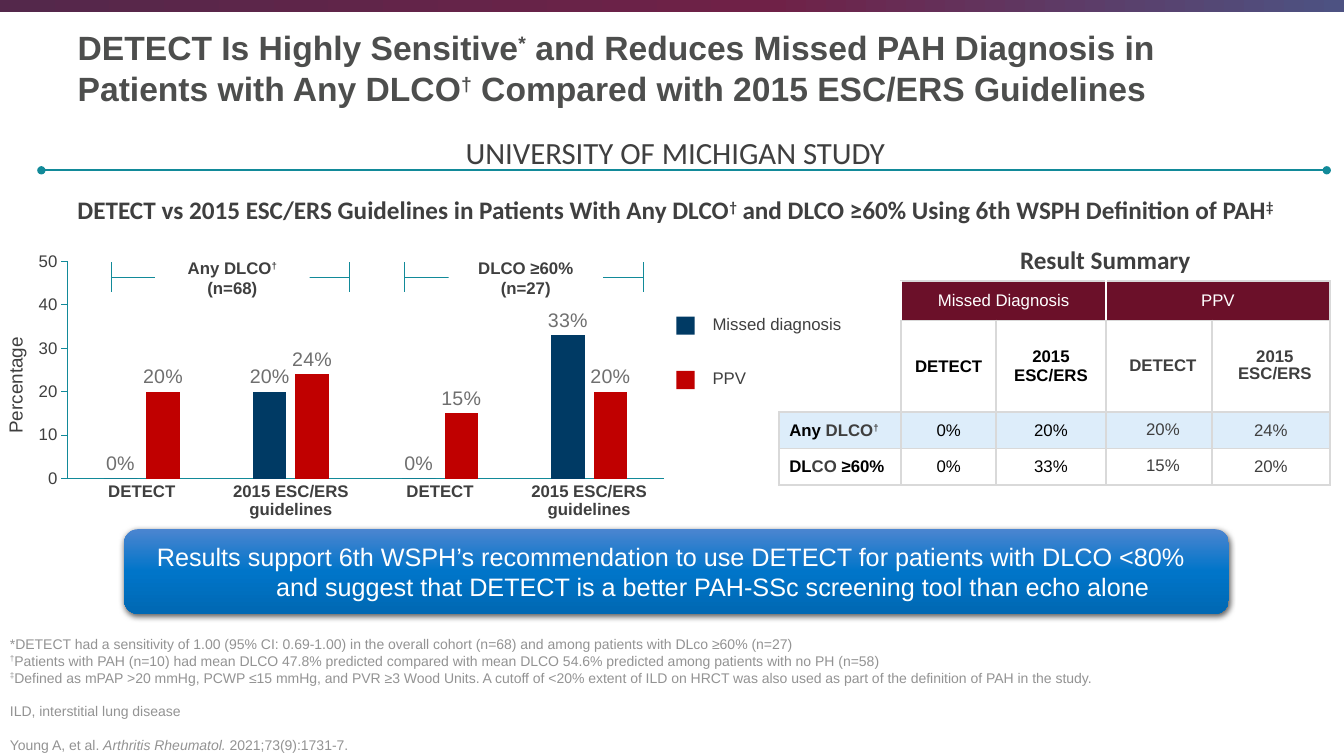
from dataclasses import dataclass, replace
from typing import Optional, Union

from pptx import Presentation, util as u
from pptx.chart.data import CategoryChartData
from pptx.dml.color import RGBColor
from pptx.enum import chart as ch, shapes, text
from pptx.oxml import parse_xml
from pptx.oxml.ns import nsdecls, qn

WHITE, BLACK = RGBColor(255, 255, 255), RGBColor(0, 0, 0)
INK = RGBColor(0x3F, 0x3F, 0x3F)
TITLE_GREY = RGBColor(0x4D, 0x4E, 0x4D)
LABEL_GREY = RGBColor(0x6F, 0x6F, 0x6F)
NOTE_GREY = RGBColor(0x93, 0x93, 0x93)
BORDER_GREY = RGBColor(0xD9, 0xD9, 0xD9)
TEAL = RGBColor(0x12, 0x8A, 0x99)
NAVY = RGBColor(0x00, 0x3A, 0x64)
RED = RGBColor(0xC0, 0x00, 0x00)
MAROON = RGBColor(0x6B, 0x10, 0x29)
PALE_BLUE = RGBColor(0xDD, 0xED, 0xFA)
BAND_STOPS = ((0, RGBColor(0x54, 0x28, 0x4B)), (57, RGBColor(0x6F, 0x21, 0x47)),
              (100, RGBColor(0x4D, 0x52, 0x82)))
BANNER_STOPS = ((0, RGBColor(0x4B, 0x85, 0xD0)), (50, RGBColor(0x00, 0x75, 0xC9)),
                (100, RGBColor(0x00, 0x68, 0xB3)))
LEFT, CENTER = text.PP_ALIGN.LEFT, text.PP_ALIGN.CENTER
TOP, MIDDLE, BOTTOM = text.MSO_ANCHOR.TOP, text.MSO_ANCHOR.MIDDLE, text.MSO_ANCHOR.BOTTOM


@dataclass(frozen=True)
class Box:
    """A frame in percent of the slide's width and height."""
    left: float
    top: float
    width: float
    height: float

    def emu(self) -> tuple:
        return across(self.left), down(self.top), across(self.width), down(self.height)


@dataclass(frozen=True)
class Run:
    text: str
    raised: bool = False
    italic: bool = False
    color: Optional[RGBColor] = None


@dataclass(frozen=True)
class Style:
    size: float
    color: RGBColor = INK
    bold: bool = False
    font: str = "Arial"
    align: text.PP_ALIGN = CENTER
    anchor: text.MSO_ANCHOR = MIDDLE
    gap: float = 0


Paragraph = list[Union[str, Run]]
DAGGER, DOUBLE_DAGGER = Run("†", raised=True), Run("‡", raised=True)

prs = Presentation()
prs.slide_width, prs.slide_height = u.Inches(13.33), u.Inches(7.5)
slide = prs.slides.add_slide(prs.slide_layouts[5])


def across(share: float) -> int:
    return int(prs.slide_width * share / 100)


def down(share: float) -> int:
    return int(prs.slide_height * share / 100)


def set_font(font, style: Style) -> None:
    font.name, font.size, font.bold = style.font, u.Pt(style.size), style.bold
    font.color.rgb = style.color


def write(frame, paragraphs: list[Paragraph], style: Style) -> None:
    for index, pieces in enumerate(paragraphs):
        paragraph = frame.add_paragraph() if index else frame.paragraphs[0]
        paragraph.alignment = style.align
        paragraph.space_before = u.Pt(style.gap if index else 0)
        set_font(paragraph.font, style)
        for piece in pieces:
            part = Run(piece) if isinstance(piece, str) else piece
            run = paragraph.add_run()
            run.text = part.text
            if part.raised:
                run._r.get_or_add_rPr().set("baseline", "30000")
            if part.italic:
                run.font.italic = True
            if part.color is not None:
                run.font.color.rgb = part.color


def fill_frame(frame, paragraphs: list[Paragraph], style: Style) -> None:
    frame.word_wrap, frame.auto_size = True, text.MSO_AUTO_SIZE.NONE
    frame.vertical_anchor = style.anchor
    write(frame, paragraphs, style)


def add_text(box: Box, paragraphs: list[Paragraph], style: Style) -> None:
    fill_frame(slide.shapes.add_textbox(*box.emu()).text_frame, paragraphs, style)


def add_block(box: Box, color: Optional[RGBColor] = None,
              kind: shapes.MSO_SHAPE = shapes.MSO_SHAPE.RECTANGLE):
    block = slide.shapes.add_shape(kind, *box.emu())
    block.shadow.inherit = False
    block.line.fill.background()
    if color is not None:
        block.fill.solid()
        block.fill.fore_color.rgb = color
    return block


def shade(block, stops: tuple, angle: int) -> None:
    """Fill a shape with a linear gradient of (percent, colour) stops."""
    block.fill.gradient()
    marks = "".join(f'<a:gs pos="{at * 1000}"><a:srgbClr val="{color}"/></a:gs>' for at, color in stops)
    properties = block._element.spPr
    properties.replace(properties.find(qn("a:gradFill")), parse_xml(
        f'<a:gradFill {nsdecls("a")}><a:gsLst>{marks}</a:gsLst>'
        f'<a:lin ang="{angle * 60000}" scaled="0"/></a:gradFill>'))


def add_line(x1: float, y1: float, x2: float, y2: float, points: float):
    line = slide.shapes.add_connector(shapes.MSO_CONNECTOR.STRAIGHT,
                                      across(x1), down(y1), across(x2), down(y2))
    line.line.color.rgb, line.line.width = TEAL, u.Pt(points)
    line._element.spPr.append(parse_xml(f'<a:effectLst {nsdecls("a")}/>'))
    return line


def place(parent, index: int, **shares: float) -> None:
    """Give a chart part a fixed layout in shares of the chart frame."""
    for old in parent.findall(qn("c:layout")):
        parent.remove(old)
    target = '<c:layoutTarget val="inner"/>' if "w" in shares else ""
    modes = "".join(f'<c:{key}Mode val="edge"/>' for key in "xy")
    values = "".join(f'<c:{key} val="{share}"/>' for key, share in shares.items())
    parent.insert(index, parse_xml(f'<c:layout {nsdecls("c")}><c:manualLayout>{target}{modes}{values}'
                                   '</c:manualLayout></c:layout>'))


def add_results_chart(box: Box) -> None:
    data = CategoryChartData()
    data.categories = ["DETECT", "2015 ESC/ERS guidelines"] * 2
    data.add_series("Missed diagnosis", (0, 20, 0, 33))
    data.add_series("PPV", (20, 24, 15, 20))
    chart = slide.shapes.add_chart(ch.XL_CHART_TYPE.COLUMN_CLUSTERED, *box.emu(), data).chart
    chart.has_legend = chart.has_title = False
    set_font(chart.font, Style(10))
    plot, groups, percent = chart.plots[0], chart.category_axis, chart.value_axis
    plot.gap_width, plot.overlap, plot.vary_by_categories = 219, -27, False
    for series, color in zip(plot.series, (NAVY, RED)):
        series.format.fill.solid()
        series.format.fill.fore_color.rgb = color
        labels = series.data_labels
        labels.show_value, labels.position = True, ch.XL_LABEL_POSITION.OUTSIDE_END
        labels.number_format, labels.number_format_is_linked = '0"%"', False
        set_font(labels.font, Style(14, LABEL_GREY))
    for axis, bold in ((groups, True), (percent, False)):
        set_font(axis.tick_labels.font, Style(12, bold=bold))
        axis.format.line.color.rgb, axis.format.line.width = TEAL, u.Pt(0.75)
    groups.major_tick_mark = ch.XL_TICK_MARK.NONE
    percent.major_tick_mark = ch.XL_TICK_MARK.OUTSIDE
    percent.minimum_scale, percent.maximum_scale, percent.major_unit = 0, 50, 10
    percent.has_major_gridlines = False
    write(percent.axis_title.text_frame, [["Percentage"]], Style(13.5))
    place(percent.axis_title._element, 1, x=0, y=0.45)
    place(chart._chartSpace.chart.plotArea, 0, x=0.082, y=0.276, w=0.726, h=0.524)


def border(cell, **sides: RGBColor) -> None:
    """Draw cell borders; sides are named L, R, T and B, in that order."""
    for side, color in sides.items():
        cell._tc.get_or_add_tcPr().append(parse_xml(
            f'<a:ln{side} {nsdecls("a")} w="{u.Pt(1.5)}"><a:solidFill><a:srgbClr val="{color}"/>'
            f'</a:solidFill></a:ln{side}>'))


def add_summary_table(box: Box) -> None:
    guideline = [["2015"], ["ESC/ERS"]]
    rows = [
        [[], [["Missed Diagnosis"]], [], [["PPV"]], []],
        [[], [["DETECT"]], guideline, [["DETECT"]], guideline],
        [[["Any ", Run("DLCO", color=INK), replace(DAGGER, color=INK)]],
         [["0%"]], [["20%"]], [["20%"]], [["24%"]]],
        [[["DL", Run("CO", color=INK), " ≥60%"]], [["0%"]], [["33%"]], [["15%"]], [["20%"]]],
    ]
    fills = (MAROON, None, PALE_BLUE, WHITE)
    table = slide.shapes.add_table(4, 5, *box.emu()).table
    table.first_row = table.horz_banding = False
    for column, share in zip(table.columns, (9.08, 7.05, 8.18, 7.88, 8.78)):
        column.width = across(share)
    for row, share in zip(table.rows, (5.2, 12.13, 4.8, 4.8)):
        row.height = down(share)
    for r, row in enumerate(rows):
        for c, paragraphs in enumerate(row):
            cell = table.cell(r, c)
            cell.vertical_anchor = MIDDLE
            corner = c == 0 and r < 2
            if r == 0 and c:
                border(cell, L=WHITE, R=BORDER_GREY if c > 2 else WHITE, T=BORDER_GREY)
            elif not corner:
                border(cell, L=BORDER_GREY, R=BORDER_GREY, T=BORDER_GREY, B=BORDER_GREY)
            if corner or fills[r] is None:
                cell.fill.background()
            else:
                cell.fill.solid()
                cell.fill.fore_color.rgb = fills[r]
            color = WHITE if r == 0 else INK if c > 2 else BLACK
            write(cell.text_frame, paragraphs,
                  Style(12, color, r == 1 or c == 0, align=CENTER if c else LEFT))
            if c == 3 and r or (r, c) == (1, 4):
                for paragraph in cell.text_frame.paragraphs:
                    paragraph.line_spacing = 0.9
                    paragraph._p.get_or_add_pPr().set("marL", str(u.Inches(0.08)))
    table.cell(0, 0).merge(table.cell(1, 0))
    for c in (1, 3):
        table.cell(0, c).merge(table.cell(0, c + 1))


def add_banner(box: Box) -> None:
    banner = add_block(box, kind=shapes.MSO_SHAPE.ROUNDED_RECTANGLE)
    shade(banner, BANNER_STOPS, 90)
    banner._element.spPr.find(qn("a:effectLst")).append(parse_xml(
        f'<a:outerShdw {nsdecls("a")} blurRad="{u.Pt(4.5)}" dist="{u.Pt(1.5)}" dir="5400000">'
        '<a:srgbClr val="000000"><a:alpha val="63000"/></a:srgbClr></a:outerShdw>'))
    fill_frame(banner.text_frame, [
        ["Results support 6th WSPH’s recommendation to use DETECT for patients with DLCO <80%"],
        ["and suggest that DETECT is a better PAH-SSc screening tool than echo alone"]], Style(18, WHITE))
    for paragraph, side, inches in zip(banner.text_frame.paragraphs, ("marR", "marL"), (0.11, 0.83)):
        paragraph._p.get_or_add_pPr().set(side, str(u.Inches(inches)))


shade(add_block(Box(0, 0, 100, 1.6)), BAND_STOPS, 0)
add_results_chart(Box(0, 19.47, 61.13, 54.8))
for step, (measure, color) in enumerate((("Missed diagnosis", NAVY), ("PPV", RED))):
    drop = 7.2 * step
    add_text(Box(52.28, 40.8 + drop, 12.6, 4.4), [[measure]], Style(12, align=LEFT, anchor=TOP))
    add_block(Box(50.33, 41.87 + drop, 1.35, 2.4), color)
for start, cohort in ((8.25, ["Any DLCO", DAGGER, " (n=68)"]), (30.08, ["DLCO ≥60% (n=27)"])):
    end = start + 17.77
    add_line(start, 36.67, end, 36.67, 0.5)
    for x in (start, end):
        add_line(x, 34.67, x, 38.67, 0.5)
    label = add_block(Box(start + 3.3, 33.07, 11.48, 7.33), WHITE)
    fill_frame(label.text_frame, [cohort], Style(12, bold=True))

title = slide.shapes.title
title.left, title.top, title.width, title.height = Box(5.03, 2.93, 88.13, 17.33).emu()
fill_frame(title.text_frame, [[
    "DETECT Is Highly Sensitive", Run("*", raised=True),
    " and Reduces Missed PAH Diagnosis in Patients with Any DLCO", DAGGER,
    " Compared with 2015 ESC/ERS Guidelines"]], Style(24, TITLE_GREY, True, align=LEFT, anchor=TOP))

add_text(Box(2.1, 17.07, 96.3, 5.47), [["UNIVERSITY OF MICHIGAN STUDY"]],
         Style(22, font="Calibri", anchor=TOP))
rule = add_line(3.08, 22.53, 98.72, 22.53, 1.5)
for end_name in ("headEnd", "tailEnd"):
    rule.line._get_or_add_ln().append(parse_xml(f'<a:{end_name} {nsdecls("a")} type="oval"/>'))
heading = Style(18, bold=True, font="Calibri")
add_text(Box(2.1, 23.87, 96.3, 7.73), [[
    "DETECT vs 2015 ESC/ERS Guidelines in Patients With Any DLCO", DAGGER,
    " and DLCO ≥60% Using 6th WSPH Definition of PAH", DOUBLE_DAGGER]], heading)
add_text(Box(66, 31.6, 32.48, 9.33), [["Result Summary"]], replace(heading, anchor=TOP))
add_summary_table(Box(57.98, 37.2, 40.97, 26.93))
add_banner(Box(9.23, 70, 82.2, 11.2))

note = Style(10, NOTE_GREY, align=LEFT, anchor=BOTTOM, gap=12)
notes = slide.shapes.add_textbox(*Box(0, 93.87, 95.33, 6.4).emu()).text_frame
fill_frame(notes, [
    ["*DETECT had a sensitivity of 1.00 (95% CI: 0.69-1.00) in the overall cohort (n=68) "
     "and among patients with DLco ≥60% (n=27)"],
    [DAGGER, "Patients with PAH (n=10) had mean DLCO 47.8% predicted compared with mean DLCO 54.6% "
     "predicted among patients with no PH (n=58)"],
    [DOUBLE_DAGGER, "Defined as mPAP >20 mmHg, PCWP ≤15 mmHg, and PVR ≥3 Wood Units. A cutoff of <20% "
     "extent of ILD on HRCT was also used as part of the definition of PAH in the study."],
    ["ILD, interstitial lung disease"],
    ["Young A, et al. ", Run("Arthritis Rheumatol. ", italic=True), "2021;73(9):1731-7."]], note)
for paragraph in notes.paragraphs[1:3]:
    paragraph.space_before = u.Pt(0)

prs.save("out.pptx")
